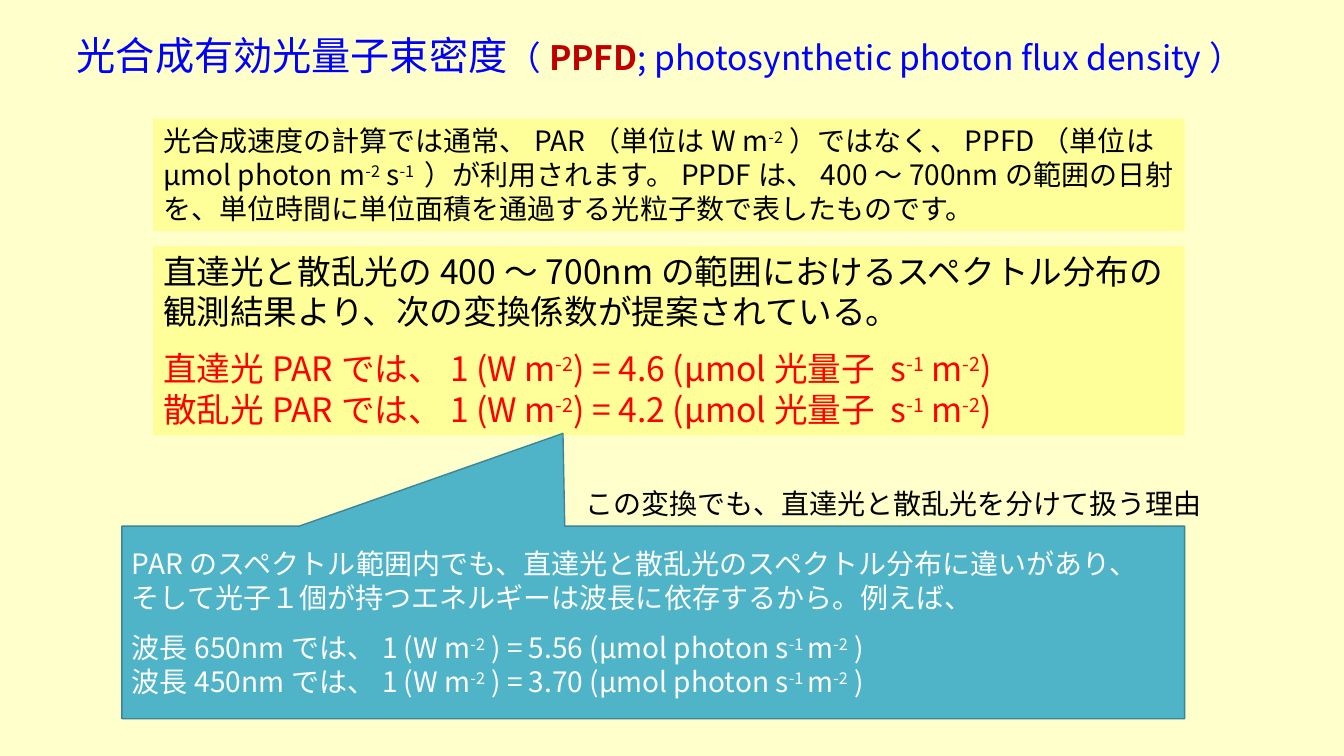
from lxml.etree import SubElement
from pptx import Presentation
from pptx.dml.color import RGBColor
from pptx.enum.shapes import MSO_SHAPE
from pptx.enum.text import MSO_ANCHOR, MSO_AUTO_SIZE, PP_ALIGN
from pptx.oxml.ns import qn
from pptx.util import Emu, Pt

PX = 9144  # 100 px to the inch
COLORS = {
    "background": "FFFFCC", "panel": "FFFF99", "callout": "50B4C8",
    "callout_edge": "3B8594", "title": "0000FF", "accent": "C00000",
    "formula": "FF0000", "text": "000000", "light": "FFFFFF",
}
JAPANESE = "Noto Sans CJK JP"


def rgb(name):
    return RGBColor.from_string(COLORS[name])


def add_runs(paragraph, text, size, color, bold=False, font=JAPANESE):
    """Write text in which ^...^ marks a superscript."""
    for i, piece in enumerate(text.split("^")):
        run = paragraph.add_run()
        run.text = piece
        run.font.size = Pt(size)
        run.font.bold = bold
        run.font.color.rgb = rgb(color)
        run.font.name = font
        properties = run._r.get_or_add_rPr()
        SubElement(properties, qn("a:ea")).set("typeface", JAPANESE)
        if i % 2:
            properties.set("baseline", "30000")


prs = Presentation()
prs.slide_width, prs.slide_height = Emu(1333 * PX), Emu(750 * PX)
slide = prs.slides.add_slide(prs.slide_layouts[6])
slide.background.fill.solid()
slide.background.fill.fore_color.rgb = rgb("background")

# Title
title = slide.shapes.add_textbox(*[Emu(v * PX) for v in (30, 20, 1249, 68)]).text_frame
title.word_wrap = True
title.vertical_anchor = MSO_ANCHOR.MIDDLE
heading = title.paragraphs[0]
heading.alignment = PP_ALIGN.CENTER
add_runs(heading, "光合成有効光量子束密度", 28, "title")
add_runs(heading, "（", 24, "title")
add_runs(heading, "PPFD", 24, "accent", bold=True)
add_runs(heading, "; photosynthetic photon flux density）", 24, "title")

# Panels and callout: lines hold text, colour and space after
definition = [
    ("光合成速度の計算では通常、PAR（単位はW m^-2^）ではなく、PPFD（単位はμmol photon m^-2^ s^-1 ^）"
     "が利用されます。PPDFは、400～700nmの範囲の日射を、単位時間に単位面積を通過する光粒子数で表したものです。",
     "text", 0),
]
conversion = [
    ("直達光と散乱光の400～700nmの範囲におけるスペクトル分布の観測結果より、次の変換係数が提案されている。",
     "text", 12),
]
for light, factor in (("直達光", "4.6"), ("散乱光", "4.2")):
    conversion.append(
        (f"{light}PARでは、1 (W m^-2^) = {factor} (μmol光量子 s^-1^ m^-2^)", "formula", 0))
reason = [
    ("PARのスペクトル範囲内でも、直達光と散乱光のスペクトル分布に違いがあり、", "light", 0),
    ("そして光子１個が持つエネルギーは波長に依存するから。例えば、", "light", 12),
]
for wavelength, factor in (("650", "5.56"), ("450", "3.70")):
    reason.append(
        (f"波長{wavelength}nmでは、1 (W m^-2^ ) = {factor} (μmol photon s^-1 ^m^-2^ )", "light", 0))

for kind, place, fill, size, lines in (
    (MSO_SHAPE.RECTANGLE, (152, 118, 1023, 111), "panel", 20, definition),
    (MSO_SHAPE.RECTANGLE, (152, 244, 1023, 188), "panel", 24, conversion),
    (MSO_SHAPE.RECTANGULAR_CALLOUT, (121, 522, 1054, 191), "callout", 20, reason),
):
    box = slide.shapes.add_shape(kind, *[Emu(v * PX) for v in place])
    box.shadow.inherit = False
    box.fill.solid()
    box.fill.fore_color.rgb = rgb(fill)
    frame = box.text_frame
    frame.word_wrap = True
    if fill == "callout":
        box.adjustments[0], box.adjustments[1] = -0.085, -0.982
        box.line.color.rgb = rgb("callout_edge")
        box.line.width = Pt(1)
        frame.vertical_anchor = MSO_ANCHOR.MIDDLE
    else:
        box.line.fill.background()
        frame.vertical_anchor = MSO_ANCHOR.TOP
        frame.auto_size = MSO_AUTO_SIZE.SHAPE_TO_FIT_TEXT
    for i, (text, color, space_after) in enumerate(lines):
        paragraph = frame.add_paragraph() if i else frame.paragraphs[0]
        paragraph.alignment = PP_ALIGN.LEFT
        paragraph.space_after = Pt(space_after)
        add_runs(paragraph, text, size, color)

# Caption above the callout
caption = slide.shapes.add_textbox(*[Emu(v * PX) for v in (571, 478, 652, 44)]).text_frame
caption.word_wrap = True
caption.auto_size = MSO_AUTO_SIZE.SHAPE_TO_FIT_TEXT
add_runs(caption.paragraphs[0], "この変換でも、直達光と散乱光を分けて扱う理由", 20, "text", font="Calibri")

prs.save("out.pptx")
